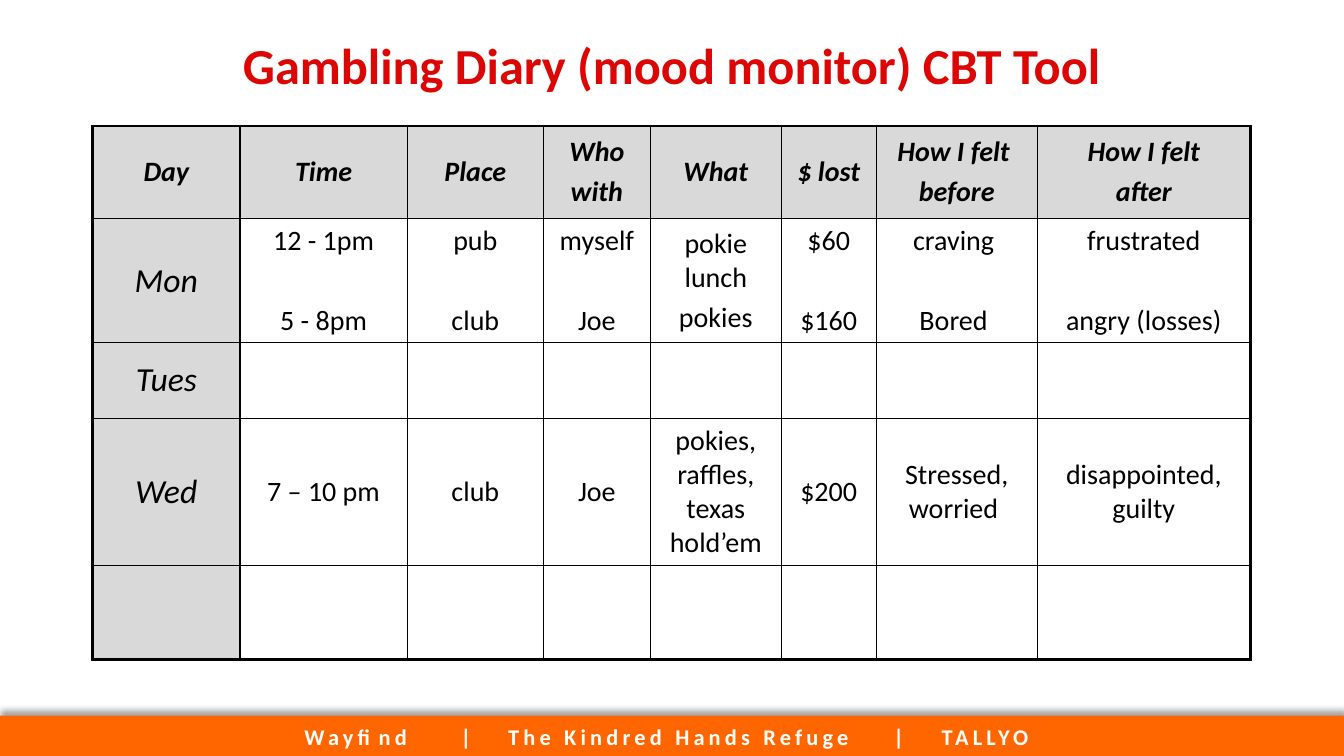
import pptx
import pptx.chart.data
import pptx.dml.color
import pptx.enum.shapes
import pptx.enum.text
import pptx.oxml
import pptx.oxml.ns
import pptx.util
from dataclasses import dataclass

Inches = pptx.util.Inches
Pt = pptx.util.Pt

TITLE = "Gambling Diary (mood monitor) CBT Tool"
HEADINGS = [["Day"], ["Time"], ["Place"], ["Who", "with"], ["What"], ["$ lost"],
            ["How I felt ", "before"], ["How I felt", "after"]]
DIARY = [
    [["Mon"], ["12 - 1pm", "5 - 8pm"], ["pub", "club"], ["myself", "Joe"],
     ["pokie lunch", "pokies"], ["$60", "$160"], ["craving ", "Bored "],
     ["frustrated", "angry (losses)"]],
    [["Tues"]] + [[]] * 7,
    [["Wed"], ["7 – 10 pm"], ["club"], ["Joe"], ["pokies, raffles, texas hold’em"],
     ["$200"], ["Stressed, worried "], ["disappointed, guilty"]],
    [[]] * 8,
]
PARTNERS = ["Wayfind", "The Kindred Hands Refuge", "TALLYO"]

COLUMN_WIDTHS = [1.46, 1.66, 1.35, 1.06, 1.3, 0.94, 1.6, 2.11]
ROW_HEIGHTS = [0.92, 1.23, 0.75, 1.46, 0.93]
DIARY_LEFT, DIARY_TOP = 0.92, 1.25
WHAT_COLUMN = 4
FOOTER_INSET = 3.02
FOOTER_TABS = [1.55, 2.02, 5.84, 6.32]


@dataclass(frozen=True)
class Theme:
    font: str = "Calibri"
    title: str = "DC0705"
    ink: str = "000000"
    shade: str = "D9D9D9"
    footer: str = "FF6600"
    footer_ink: str = "FFFFFF"
    shadow: str = "A6A6A6"
    title_size: int = 36
    day_size: int = 24
    entry_size: int = 20
    footer_size: int = 16
    outer_line: float = 2.25
    inner_line: float = 1
    line_gap: float = 4
    session_gap: float = 32.4


theme = Theme()


def rgb(value):
    return pptx.dml.color.RGBColor.from_string(value)


def drawing_xml(markup):
    head, rest = markup.split(">", 1)
    return pptx.oxml.parse_xml(f"{head} {pptx.oxml.ns.nsdecls('a')}>{rest}")


def format_paragraph(paragraph, size, color, bold=False, italic=False, align="CENTER"):
    paragraph.alignment = getattr(pptx.enum.text.PP_ALIGN, align)
    for run in paragraph.runs:
        run.font.name = theme.font
        run.font.size = Pt(size)
        run.font.bold = bold
        run.font.italic = italic
        run.font.color.rgb = rgb(color)


def draw_borders(cell, row, column):
    outer_sides = {
        "L": column == 0,
        "R": column == len(HEADINGS) - 1,
        "T": row == 0,
        "B": row == len(DIARY),
    }
    properties = cell._tc.get_or_add_tcPr()
    for side, is_outer in outer_sides.items():
        width = Pt(theme.outer_line if is_outer else theme.inner_line)
        properties.append(drawing_xml(
            f'<a:ln{side} w="{int(width)}"><a:solidFill><a:srgbClr val="{theme.ink}"/>'
            f'</a:solidFill></a:ln{side}>'))


def fill_cell(cell, row, column, lines):
    draw_borders(cell, row, column)
    is_heading, is_day = row == 0, column == 0
    if is_heading or is_day:
        cell.fill.solid()
        cell.fill.fore_color.rgb = rgb(theme.shade)
    else:
        cell.fill.background()
    cell.vertical_anchor = pptx.enum.text.MSO_ANCHOR.MIDDLE
    cell.text_frame.text = "\n".join(lines)
    size = theme.day_size if is_day and not is_heading else theme.entry_size
    for index, paragraph in enumerate(cell.text_frame.paragraphs):
        new_session = index > 0 and not is_heading and column != WHAT_COLUMN
        paragraph.space_before = Pt(theme.session_gap if new_session else theme.line_gap)
        format_paragraph(paragraph, size, theme.ink, is_heading, is_heading or is_day)


def add_title(slide):
    title = slide.shapes.add_textbox(0, 0, Inches(13.33), Inches(1.35))
    frame = title.text_frame
    frame.word_wrap = True
    frame.vertical_anchor = pptx.enum.text.MSO_ANCHOR.MIDDLE
    frame.text = TITLE
    frame.paragraphs[0].line_spacing = 0.9
    format_paragraph(frame.paragraphs[0], theme.title_size, theme.title, bold=True)


def add_diary(slide):
    rows = [HEADINGS] + DIARY
    diary = slide.shapes.add_table(
        len(rows), len(HEADINGS), Inches(DIARY_LEFT), Inches(DIARY_TOP),
        Inches(sum(COLUMN_WIDTHS)), Inches(sum(ROW_HEIGHTS))).table
    diary.first_row = False
    diary.horz_banding = False
    for column, width in zip(diary.columns, COLUMN_WIDTHS):
        column.width = Inches(width)
    for row, height in zip(diary.rows, ROW_HEIGHTS):
        row.height = Inches(height)
    for row, entries in enumerate(rows):
        for column, lines in enumerate(entries):
            fill_cell(diary.cell(row, column), row, column, lines)


def add_footer(slide):
    footer = slide.shapes.add_shape(
        pptx.enum.shapes.MSO_SHAPE.RECTANGLE, 0, Inches(7.1), Inches(13.33), Inches(0.41))
    footer.shadow.inherit = False
    footer.fill.solid()
    footer.fill.fore_color.rgb = rgb(theme.footer)
    footer.line.fill.background()
    effects = footer._element.spPr.find(pptx.oxml.ns.qn("a:effectLst"))
    effects.append(drawing_xml(
        f'<a:outerShdw blurRad="{int(Pt(4))}" dist="{int(Pt(4))}" dir="{280 * 60000}">'
        f'<a:srgbClr val="{theme.shadow}"/></a:outerShdw>'))

    frame = footer.text_frame
    frame.vertical_anchor = pptx.enum.text.MSO_ANCHOR.MIDDLE
    frame.margin_left = Inches(FOOTER_INSET)
    frame.margin_right = 0
    frame.text = "\t|\t".join(PARTNERS)
    partners = frame.paragraphs[0]
    format_paragraph(partners, theme.footer_size, theme.footer_ink, bold=True, align="LEFT")
    stops = "".join(f'<a:tab pos="{int(Inches(stop))}" algn="l"/>' for stop in FOOTER_TABS)
    partners._p.get_or_add_pPr().append(drawing_xml(f"<a:tabLst>{stops}</a:tabLst>"))
    for run in partners.runs:
        run._r.get_or_add_rPr().set("spc", "300")


def main():
    presentation = pptx.Presentation()
    presentation.slide_width = Inches(13.33)
    presentation.slide_height = Inches(7.5)
    slide = presentation.slides.add_slide(presentation.slide_layouts[6])
    add_title(slide)
    add_diary(slide)
    add_footer(slide)
    presentation.save("out.pptx")


if __name__ == "__main__":
    main()
